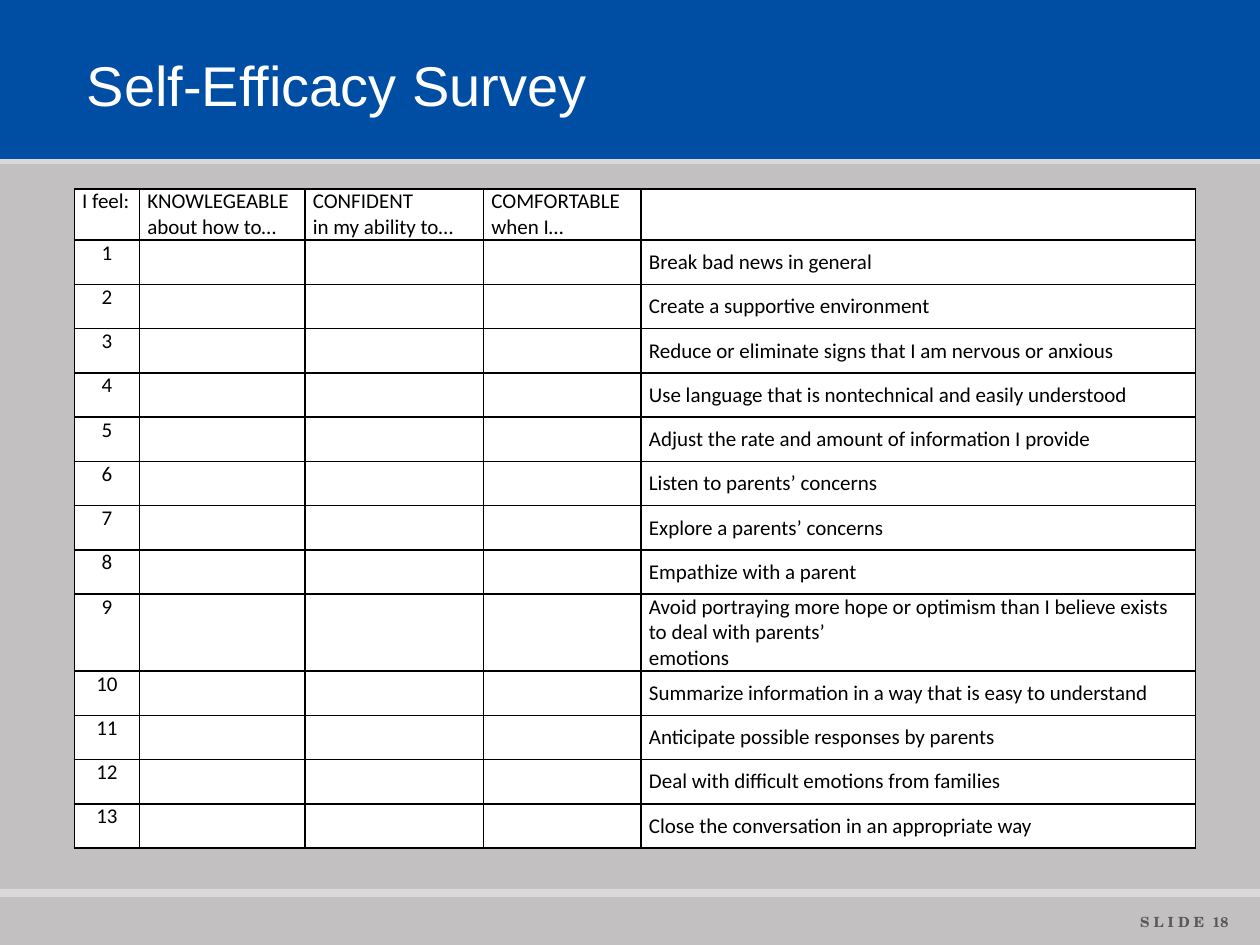
from lxml import etree
from pptx import Presentation
from pptx import util as u
from pptx.dml.color import RGBColor
from pptx.enum import shapes, text
from pptx.oxml.ns import qn

HEADERS = [["I feel:"], ["KNOWLEGEABLE", "about how to…"], ["CONFIDENT", "in my ability to…"],
           ["COMFORTABLE", "when I…"], []]
SKILLS = [
    ["Break bad news in general"],
    ["Create a supportive environment"],
    ["Reduce or eliminate signs that I am nervous or anxious"],
    ["Use language that is nontechnical and easily understood"],
    ["Adjust the rate and amount of information I provide"],
    ["Listen to parents’ concerns"],
    ["Explore a parents’ concerns"],
    ["Empathize with a parent"],
    ["Avoid portraying more hope or optimism than I believe exists to deal with parents’", "emotions"],
    ["Summarize information in a way that is easy to understand"],
    ["Anticipate possible responses by parents"],
    ["Deal with difficult emotions from families"],
    ["Close the conversation in an appropriate way"],
]
COL_WIDTHS = [37.2, 94.6, 102.1, 90, 316.9]
HEADER_H, ROW_H, LINE_H = 29.3, 25.3, 14.65


def color(hex_value):
    """Turn a hex string into a colour."""
    return RGBColor.from_string(hex_value)


def points(box):
    """Turn a box of numbers into lengths in points."""
    return [u.Pt(v) for v in box]


def add_text(tf, lines, font, size, hex_value, align=text.PP_ALIGN.LEFT, bold=False):
    """Write each line as one paragraph."""
    for i, line in enumerate(lines):
        p = tf.paragraphs[0] if i == 0 else tf.add_paragraph()
        p.alignment = align
        r = p.add_run()
        r.text = line
        r.font.name, r.font.size, r.font.bold = font, u.Pt(size), bold
        r.font.color.rgb = color(hex_value)


def add_bar(s, box, fill):
    """Add a plain band."""
    sp = s.shapes.add_shape(shapes.MSO_SHAPE.RECTANGLE, *points(box))
    sp.shadow.inherit = False
    sp.fill.solid()
    sp.fill.fore_color.rgb = color(fill)
    sp.line.fill.background()


def add_title(s, box, title):
    """Place the title placeholder in front of the header band."""
    sp = s.shapes.title
    s.shapes.element.append(sp.element)
    sp.left, sp.top, sp.width, sp.height = points(box)
    sp.text_frame.vertical_anchor = text.MSO_ANCHOR.MIDDLE
    add_text(sp.text_frame, [title], "Arial", 32, "FFFFFF")


def add_page_label(s, box, label):
    """Add the slide number label."""
    tf = s.shapes.add_textbox(*points(box)).text_frame
    tf.word_wrap = True
    add_text(tf, [label], "TeX Gyre Schola", 8, "585858", text.PP_ALIGN.RIGHT, True)


def add_borders(cell, hex_value, width):
    """Draw the four borders of a cell."""
    tc_pr = cell._tc.get_or_add_tcPr()
    for i, side in enumerate(("lnL", "lnR", "lnT", "lnB")):
        ln = etree.Element(qn("a:" + side), w=str(u.Pt(width)))
        fill = etree.SubElement(ln, qn("a:solidFill"))
        etree.SubElement(fill, qn("a:srgbClr"), val=hex_value)
        tc_pr.insert(i, ln)


def add_survey(s, box):
    """Add the survey table with numbered skills."""
    rows = [HEADERS] + [[[str(n)], [], [], [], skill] for n, skill in enumerate(SKILLS, 1)]
    table = s.shapes.add_table(len(rows), len(COL_WIDTHS), *points(box)).table
    table.horz_banding = False
    for col, width in zip(table.columns, COL_WIDTHS):
        col.width = u.Pt(width)
    for i, row in enumerate(rows):
        height = ROW_H if len(row[-1]) < 2 else 3 * LINE_H
        table.rows[i].height = u.Pt(height if i else HEADER_H)
        for j, lines in enumerate(row):
            cell = table.cell(i, j)
            cell.margin_left = cell.margin_right = u.Pt(4.5)
            cell.margin_top = cell.margin_bottom = u.Pt(0)
            cell.fill.solid()
            cell.fill.fore_color.rgb = color("FFFFFF")
            if i and j == len(row) - 1:
                cell.vertical_anchor = text.MSO_ANCHOR.MIDDLE
            align = text.PP_ALIGN.CENTER if i and j == 0 else text.PP_ALIGN.LEFT
            add_text(cell.text_frame, lines, "Calibri", 12, "000000", align)
            add_borders(cell, "000000", 1)


def main():
    """Build the slide."""
    prs = Presentation()
    prs.slide_width, prs.slide_height = u.Pt(720), u.Pt(540)
    s = prs.slides.add_slide(prs.slide_layouts[5])
    s.background.fill.solid()
    s.background.fill.fore_color.rgb = color("C2C0C0")
    add_bar(s, (0, 75.6, 720, 18), "DAD9D9")
    add_bar(s, (0, -0.6, 720, 91.4), "004DA4")
    add_page_label(s, (607, 518.4, 102.2, 16.6), "S L I D E  18")
    add_bar(s, (0, 508, 720, 4.5), "DAD9D9")
    add_title(s, (42.5, 12.2, 640.8, 72), "Self-Efficacy Survey")
    add_survey(s, (42.5, 108, 640.8, 376.6))
    prs.save("out.pptx")


if __name__ == "__main__":
    main()
